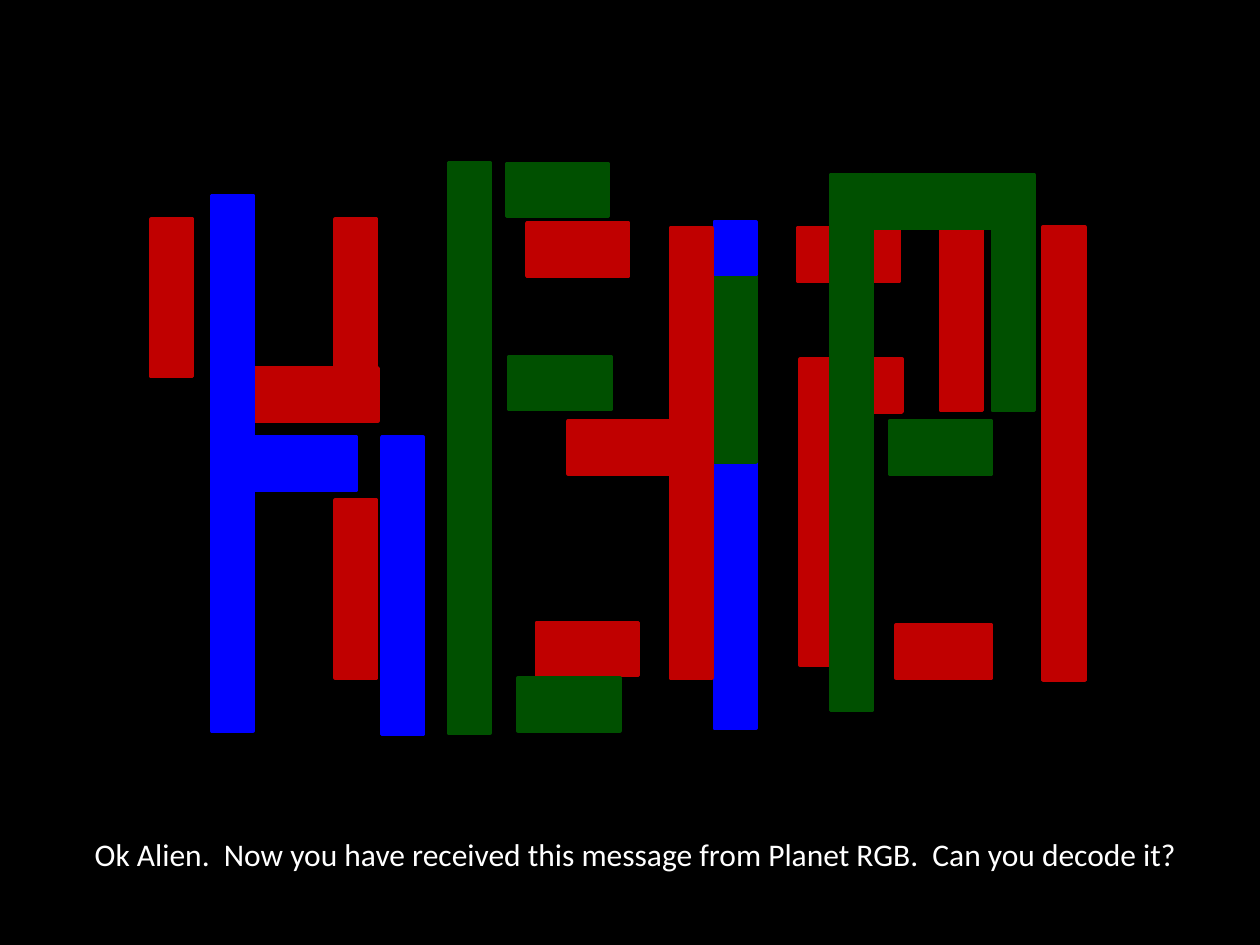
from pptx import Presentation
from pptx import util as u
from pptx.dml.color import RGBColor
from pptx.enum import shapes, text

PX = 9144  # EMU per px, 100 px to the inch
SLIDE_WIDTH, SLIDE_HEIGHT = 1000, 750
BLACK, WHITE = "000000", "FFFFFF"
RED, GREEN, BLUE = "C00000", "005000", "0000FF"
STEM = 33   # width of every upright stroke
BAR = 42    # height of every cross stroke
SHORT = 81  # usual length of a cross stroke

# Letter strokes from back to front: colour, left, top, width, height
STROKES = [
    (BLUE, 303, 347, STEM, 236),
    (GREEN, 788, 139, STEM, 187),
    (BLUE, 202, 347, SHORT, BAR),
    (RED, 426, 494, SHORT, BAR),
    (RED, 451, 334, SHORT, BAR),
    (RED, 418, 177, SHORT, BAR),
    (RED, 633, 181, SHORT, BAR),
    (RED, 635, 285, SHORT, BAR),
    (RED, 747, 181, STEM, 145),
    (GREEN, 706, 334, SHORT, BAR),
    (GREEN, 693, 139, 95, BAR),
    (BLUE, 567, 347, STEM, 231),
    (GREEN, 356, 129, STEM, 453),
    (RED, 635, 325, STEM, 203),
    (RED, 711, 496, 76, BAR),
    (RED, 828, 180, STEM, 360),
    (RED, 266, 174, STEM, 118),
    (RED, 266, 397, STEM, 141),
    (RED, 202, 292, 98, BAR),
    (BLUE, 168, 155, STEM, 425),
    (RED, 120, 174, STEM, 125),
    (GREEN, 411, 538, SHORT, BAR),
    (GREEN, 404, 283, SHORT, BAR),
    (GREEN, 402, 130, SHORT, BAR),
    (GREEN, 659, 139, STEM, 425),
    (GREEN, 567, 210, STEM, 157),
    (BLUE, 567, 176, STEM, BAR),
    (RED, 532, 181, STEM, 357),
]

CAPTION = "Ok Alien.  Now you have received this message from Planet RGB.  Can you decode it?"
CAPTION_BOX = (0, 658, 1009, 40)
CAPTION_FONT = {"name": "Calibri", "size": u.Pt(18)}


def paint(fill, colour):
    fill.solid()
    fill.fore_color.rgb = RGBColor.from_string(colour)


def to_emu(box):
    return [length * PX for length in box]


def add_stroke(slide, colour, *box):
    shape = slide.shapes.add_shape(shapes.MSO_SHAPE.RECTANGLE, *to_emu(box))
    shape.shadow.inherit = False
    paint(shape.fill, colour)
    paint(shape.line.fill, colour)
    shape.line.width = u.Pt(2)


def add_caption(slide):
    frame = slide.shapes.add_textbox(*to_emu(CAPTION_BOX)).text_frame
    frame.word_wrap = True
    frame.auto_size = text.MSO_AUTO_SIZE.SHAPE_TO_FIT_TEXT
    paragraph = frame.paragraphs[0]
    paragraph.alignment = text.PP_ALIGN.CENTER
    run = paragraph.add_run()
    run.text = CAPTION
    for name, value in CAPTION_FONT.items():
        setattr(run.font, name, value)
    paint(run.font.fill, WHITE)


def main():
    presentation = Presentation()
    presentation.slide_width = SLIDE_WIDTH * PX
    presentation.slide_height = SLIDE_HEIGHT * PX
    slide = presentation.slides.add_slide(presentation.slide_layouts[6])
    paint(slide.background.fill, BLACK)
    for stroke in STROKES:
        add_stroke(slide, *stroke)
    add_caption(slide)
    presentation.save("out.pptx")


if __name__ == "__main__":
    main()
